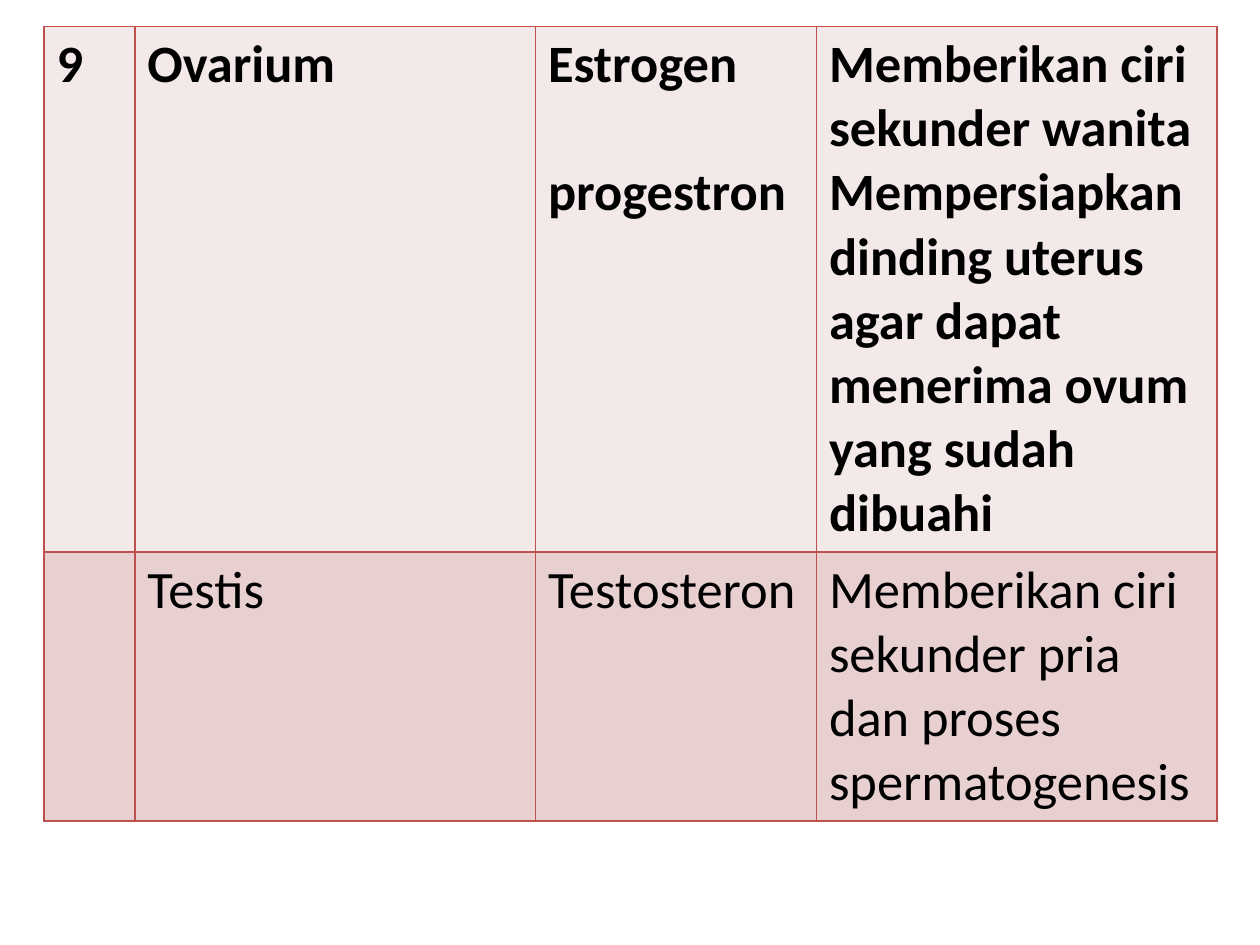
from dataclasses import dataclass

from lxml.etree import SubElement
from pptx import Presentation
from pptx.dml.color import RGBColor
from pptx.oxml.ns import qn
from pptx.util import Inches, Pt


@dataclass(frozen=True)
class Theme:
    font: str = "Calibri"
    body_size: float = 30
    line_height: float = 36.6
    ink: str = "000000"
    border: str = "C0504D"
    border_width: float = 1
    light_band: str = "F4E9E9"
    dark_band: str = "E8D0D0"


@dataclass(frozen=True)
class GlandRow:
    height: float  # percent of slide height
    fill: str
    bold: bool
    cells: tuple[str, ...]
    gap_lines: tuple[int, ...] = (0, 0, 0, 0)  # lines left open between paragraphs


THEME = Theme()
SLIDE_WIDTH, SLIDE_HEIGHT = Inches(10), Inches(7.5)

# Table grid, in percent of the slide's size
TABLE_LEFT, TABLE_TOP = 3.5, 2.8
COLUMN_WIDTHS = (7.2, 31.8, 22.3, 31.8)

GLANDS = (
    GlandRow(55.6, THEME.light_band, True, (
        "9",
        "Ovarium",
        "Estrogen\nprogestron",
        "Memberikan ciri sekunder wanita\n"
        "Mempersiapkan dinding uterus agar dapat menerima ovum yang sudah dibuahi",
    ), gap_lines=(0, 0, 1, 0)),
    GlandRow(28.4, THEME.dark_band, False, (
        "",
        "Testis",
        "Testosteron",
        "Memberikan ciri sekunder pria dan proses spermatogenesis",
    )),
)


def across(percent: float) -> int:
    return round(SLIDE_WIDTH * percent / 100)


def down(percent: float) -> int:
    return round(SLIDE_HEIGHT * percent / 100)


def draw_borders(cell) -> None:
    properties = cell._tc.get_or_add_tcPr()
    for position, side in enumerate(("a:lnL", "a:lnR", "a:lnT", "a:lnB")):
        line = SubElement(properties, qn(side), w=str(Pt(THEME.border_width)))
        solid = SubElement(line, qn("a:solidFill"))
        SubElement(solid, qn("a:srgbClr"), val=THEME.border)
        properties.insert(position, line)  # borders come before the fill


def write_cell(cell, text: str, bold: bool, gap_lines: int) -> None:
    cell.text_frame.text = text
    for index, paragraph in enumerate(cell.text_frame.paragraphs):
        if index and gap_lines:
            paragraph.space_before = Pt(gap_lines * THEME.line_height)
        paragraph.font.size = Pt(THEME.body_size)
        for run in paragraph.runs:
            run.font.name = THEME.font
            run.font.size = Pt(THEME.body_size)
            run.font.bold = bold
            run.font.color.rgb = RGBColor.from_string(THEME.ink)


def draw_gland_table(slide, glands: tuple[GlandRow, ...]) -> None:
    table = slide.shapes.add_table(
        len(glands), len(COLUMN_WIDTHS),
        across(TABLE_LEFT), down(TABLE_TOP),
        across(sum(COLUMN_WIDTHS)), down(sum(gland.height for gland in glands)),
    ).table
    table.first_row = False
    table.horz_banding = False
    for column, width in zip(table.columns, COLUMN_WIDTHS):
        column.width = across(width)
    for row, gland in zip(table.rows, glands):
        row.height = down(gland.height)
        for cell, text, gap in zip(row.cells, gland.cells, gland.gap_lines):
            cell.fill.solid()
            cell.fill.fore_color.rgb = RGBColor.from_string(gland.fill)
            draw_borders(cell)
            write_cell(cell, text, gland.bold, gap)


def main() -> None:
    presentation = Presentation()
    presentation.slide_width, presentation.slide_height = SLIDE_WIDTH, SLIDE_HEIGHT
    slide = presentation.slides.add_slide(presentation.slide_layouts[6])
    # Glands, their hormones and functions
    draw_gland_table(slide, GLANDS)
    presentation.save("out.pptx")


if __name__ == "__main__":
    main()
